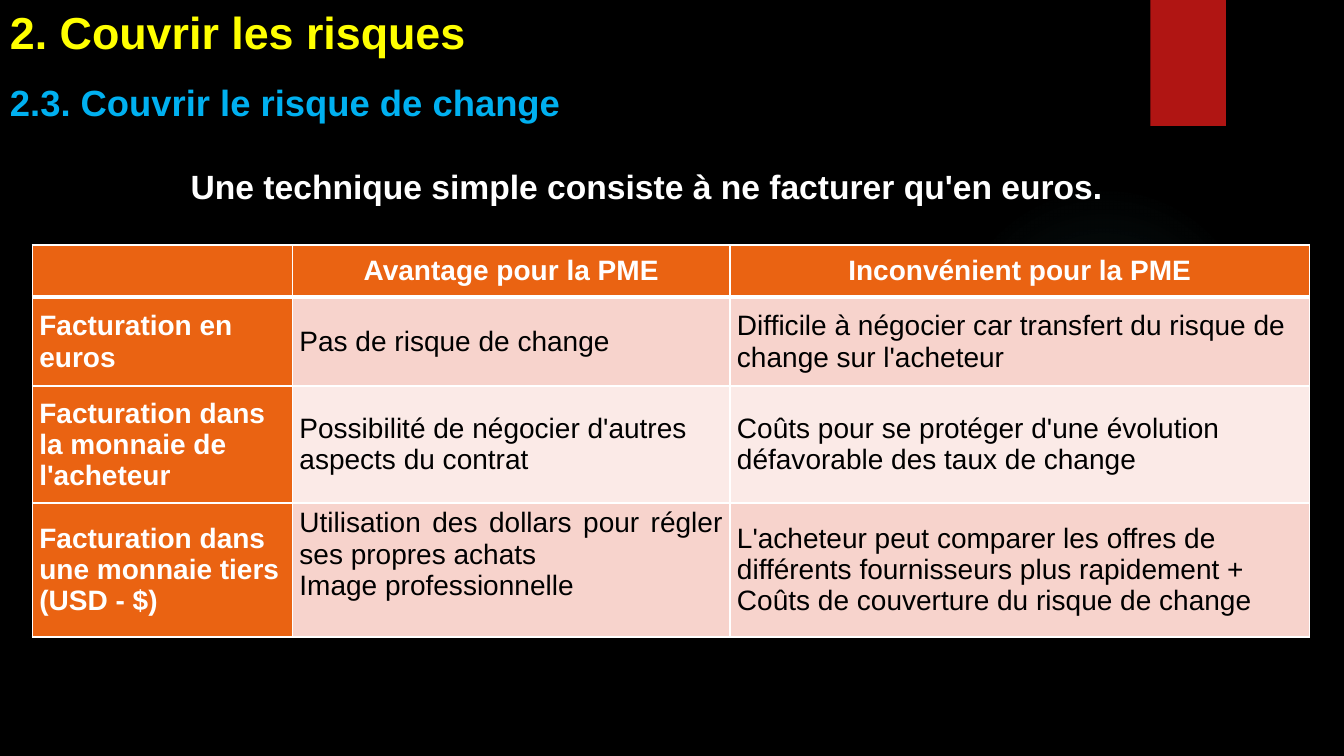
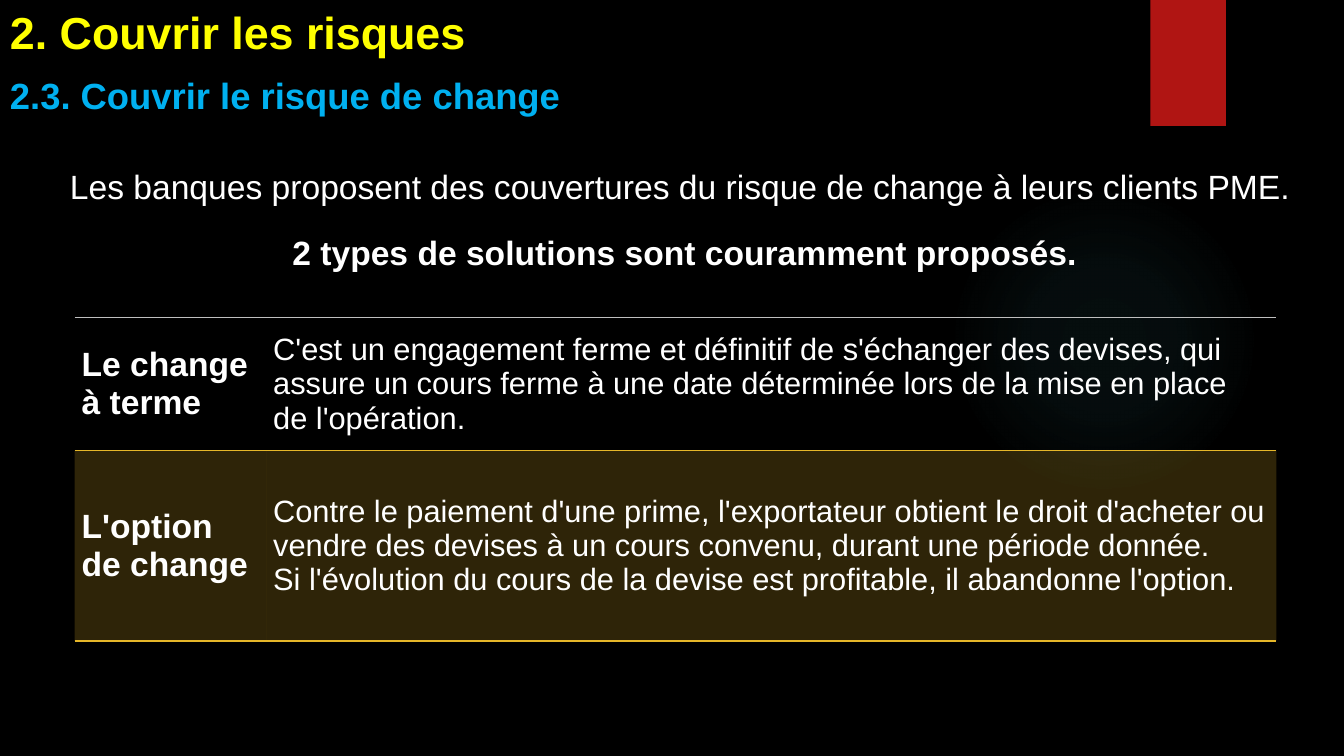
from dataclasses import dataclass, field

from lxml import etree
from pptx import Presentation
from pptx.dml.color import RGBColor
from pptx.enum.shapes import MSO_SHAPE
from pptx.enum.text import MSO_ANCHOR, MSO_AUTO_SIZE, PP_ALIGN
from pptx.oxml import parse_xml
from pptx.oxml.ns import nsdecls, qn
from pptx.shapes.autoshape import Shape
from pptx.slide import Slide
from pptx.table import Table, _Cell
from pptx.text.text import TextFrame
from pptx.util import Inches, Pt

LEFT, CENTER, JUSTIFY = PP_ALIGN.LEFT, PP_ALIGN.CENTER, PP_ALIGN.JUSTIFY
MIDDLE = MSO_ANCHOR.MIDDLE
GROW = MSO_AUTO_SIZE.SHAPE_TO_FIT_TEXT
RECTANGLE, OVAL = MSO_SHAPE.RECTANGLE, MSO_SHAPE.OVAL

FONT = "Arial"
COLORS = {
    "background": "000000",
    "text": "FFFFFF",
    "dark_text": "000000",
    "title": "FFFF00",
    "section": "00B0F0",
    "ribbon": "B01513",
    "glow": "50B9C1",
    "header": "EA6312",
    "band_dark": "F7D3CC",
    "band_light": "FBEAE7",
    "gold": "E6B729",
    "rule": "BFBFBF",
}
GLOW_STOPS = ((0, 7), (36, 6), (69, 0))
TITLE = "2. Couvrir les risques"
SECTION = "2.3. Couvrir le risque de change"
SECTION_FORMAT = {"size": 26, "color": "section", "bold": True, "after": 6}


@dataclass(frozen=True)
class Border:
    color: str
    width: float


@dataclass(frozen=True)
class CellStyle:
    size: float
    color: str = "text"
    bold: bool = False
    align: PP_ALIGN = LEFT
    fill: str | None = None
    opacity: int = 100
    borders: dict[str, Border] = field(default_factory=dict)
    bottom: float = 0


def rgb(name: str) -> RGBColor:
    return RGBColor.from_string(COLORS[name])


def add_text(frame: TextFrame, text: str, *, size: float, color: str = "text",
             bold: bool = False, align: PP_ALIGN = LEFT,
             before: float = 0, after: float = 0) -> None:
    first = frame.paragraphs[0]
    paragraph = frame.add_paragraph() if first.runs else first
    paragraph.alignment = align
    paragraph.space_before = Pt(before)
    paragraph.space_after = Pt(after)
    run = paragraph.add_run()
    run.text = text
    run.font.name = FONT
    run.font.size = Pt(size)
    run.font.bold = bold
    run.font.color.rgb = rgb(color)


def add_box(slide: Slide, left: float, top: float, width: float, height: float) -> TextFrame:
    frame = slide.shapes.add_textbox(
        Inches(left), Inches(top), Inches(width), Inches(height)).text_frame
    frame.word_wrap = True
    frame.auto_size = GROW
    return frame


def add_plain_shape(slide: Slide, kind: MSO_SHAPE, left: float, top: float,
                    width: float, height: float) -> Shape:
    shape = slide.shapes.add_shape(
        kind, Inches(left), Inches(top), Inches(width), Inches(height))
    shape.shadow.inherit = False
    shape.line.fill.background()
    return shape


def add_glow(slide: Slide) -> None:
    glow = add_plain_shape(slide, OVAL, 9.41, 1.83, 3.08, 3.08)
    stops = "".join(
        f'<a:gs pos="{position * 1000}"><a:srgbClr val="{COLORS["glow"]}">'
        f'<a:alpha val="{opacity * 1000}"/></a:srgbClr></a:gs>'
        for position, opacity in GLOW_STOPS)
    gradient = parse_xml(
        f'<a:gradFill {nsdecls("a")} rotWithShape="1"><a:gsLst>{stops}</a:gsLst>'
        '<a:path path="circle"><a:fillToRect l="50000" t="50000" r="50000" b="50000"/>'
        '</a:path></a:gradFill>')
    glow._element.spPr.find(qn("a:prstGeom")).addnext(gradient)


def add_base_slide(deck: Presentation) -> Slide:
    slide = deck.slides.add_slide(deck.slide_layouts[6])
    slide.background.fill.solid()
    slide.background.fill.fore_color.rgb = rgb("background")
    add_glow(slide)
    ribbon = add_plain_shape(slide, RECTANGLE, 11.41, 0, 0.75, 1.25)
    ribbon.fill.solid()
    ribbon.fill.fore_color.rgb = rgb("ribbon")
    add_text(add_box(slide, 0, 0, 9.52, 0.64), TITLE, size=32, color="title", bold=True)
    return slide


def set_borders(cell: _Cell, borders: dict[str, Border]) -> None:
    properties = cell._tc.get_or_add_tcPr()
    for side in "LRTB":
        line = etree.SubElement(properties, qn(f"a:ln{side}"))
        border = borders.get(side)
        if border is None:
            etree.SubElement(line, qn("a:noFill"))
            continue
        line.set("w", str(Pt(border.width)))
        paint = etree.SubElement(line, qn("a:solidFill"))
        etree.SubElement(paint, qn("a:srgbClr")).set("val", COLORS[border.color])


def fill_cell(cell: _Cell, text: str, style: CellStyle) -> None:
    cell.vertical_anchor = MIDDLE
    cell.margin_left = cell.margin_right = Inches(0.07)
    cell.margin_top = 0
    cell.margin_bottom = Inches(style.bottom)
    set_borders(cell, style.borders)
    if style.fill is None:
        cell.fill.background()
    else:
        cell.fill.solid()
        cell.fill.fore_color.rgb = rgb(style.fill)
        if style.opacity < 100:
            tint = cell._tc.tcPr.find(qn("a:solidFill")).find(qn("a:srgbClr"))
            etree.SubElement(tint, qn("a:alpha")).set("val", str(style.opacity * 1000))
    for line in text.splitlines():
        add_text(cell.text_frame, line, size=style.size, color=style.color,
                 bold=style.bold, align=style.align)


def add_grid(slide: Slide, left: float, top: float,
             widths: tuple[float, ...], heights: tuple[float, ...]) -> Table:
    table = slide.shapes.add_table(
        len(heights), len(widths), Inches(left), Inches(top),
        Inches(sum(widths)), Inches(sum(heights))).table
    for column, width in zip(table.columns, widths):
        column.width = Inches(width)
    for row, height in zip(table.rows, heights):
        row.height = Inches(height)
    table.horz_banding = False
    return table


def build_invoicing_slide(deck: Presentation) -> None:
    slide = add_base_slide(deck)
    intro = add_box(slide, 0, 0.75, 12.92, 1.36)
    add_text(intro, SECTION, **SECTION_FORMAT)
    add_text(intro, "Une technique simple consiste à ne facturer qu'en euros. ",
             size=24, bold=True, align=CENTER, before=24, after=6)

    rows = (
        ("", "Avantage pour la PME", "Inconvénient pour la PME"),
        ("Facturation en euros", "Pas de risque de change",
         "Difficile à négocier car transfert du risque de change sur l'acheteur"),
        ("Facturation dans la monnaie de l'acheteur",
         "Possibilité de négocier d'autres aspects du contrat",
         "Coûts pour se protéger d'une évolution défavorable des taux de change"),
        ("Facturation dans une monnaie tiers (USD - $)",
         "Utilisation des dollars pour régler ses propres achats\nImage professionnelle",
         "L'acheteur peut comparer les offres de différents fournisseurs plus rapidement"
         " + Coûts de couverture du risque de change"),
    )
    thin, thick = Border("text", 1), Border("text", 3)
    box = dict.fromkeys("LRTB", thin)
    under_header = box | {"T": thick}
    table = add_grid(slide, 0.32, 2.43, (2.58, 4.34, 5.75), (0.52, 0.88, 1.16, 1.33))
    for r, texts in enumerate(rows):
        borders = box | {"B": thick} if r == 0 else under_header if r == 1 else box
        for c, text in enumerate(texts):
            if r == 0 or c == 0:
                style = CellStyle(20, bold=True, align=LEFT if c == 0 else CENTER,
                                  fill="header", borders=borders)
            else:
                two_points = "\n" in text
                style = CellStyle(20, "dark_text", align=JUSTIFY if two_points else LEFT,
                                  fill="band_dark" if r % 2 else "band_light",
                                  borders=borders, bottom=0.31 if two_points else 0)
            fill_cell(table.cell(r, c), text, style)


def build_solutions_slide(deck: Presentation) -> None:
    slide = add_base_slide(deck)
    intro = add_box(slide, 0.45, 1.6, 12.68, 1.16)
    add_text(intro, "Les banques proposent des couvertures du risque de change"
             " à leurs clients PME. ", size=24, align=CENTER, after=6)
    add_text(intro, "2 types de solutions sont couramment proposés.",
             size=24, bold=True, align=CENTER, before=12, after=6)

    solutions = (
        ("Le change à terme",
         "C'est un engagement ferme et définitif de s'échanger des devises, qui assure"
         " un cours ferme à une date déterminée lors de la mise en place de l'opération."),
        ("L'option de change",
         "Contre le paiement d'une prime, l'exportateur obtient le droit d'acheter ou"
         " vendre des devises à un cours convenu, durant une période donnée.\n"
         "Si l'évolution du cours de la devise est profitable, il abandonne l'option."),
    )
    gold = Border("gold", 1.5)
    row_looks = (
        {"borders": {"T": Border("rule", 0.75), "B": gold}},
        {"borders": {"T": gold, "B": gold}, "fill": "gold", "opacity": 20},
    )
    table = add_grid(slide, 0.74, 3.15, (1.9, 10.02), (1.32, 1.89))
    table.first_row = False
    for r, ((name, description), look) in enumerate(zip(solutions, row_looks)):
        fill_cell(table.cell(r, 0), name, CellStyle(24, bold=True, **look))
        fill_cell(table.cell(r, 1), description, CellStyle(22, **look))

    add_text(add_box(slide, 0, 0.68, 11.48, 0.54), SECTION, **SECTION_FORMAT)


def main() -> None:
    deck = Presentation()
    deck.slide_width, deck.slide_height = Inches(13.33), Inches(7.5)
    build_invoicing_slide(deck)
    build_solutions_slide(deck)
    deck.save("out.pptx")


if __name__ == "__main__":
    main()
